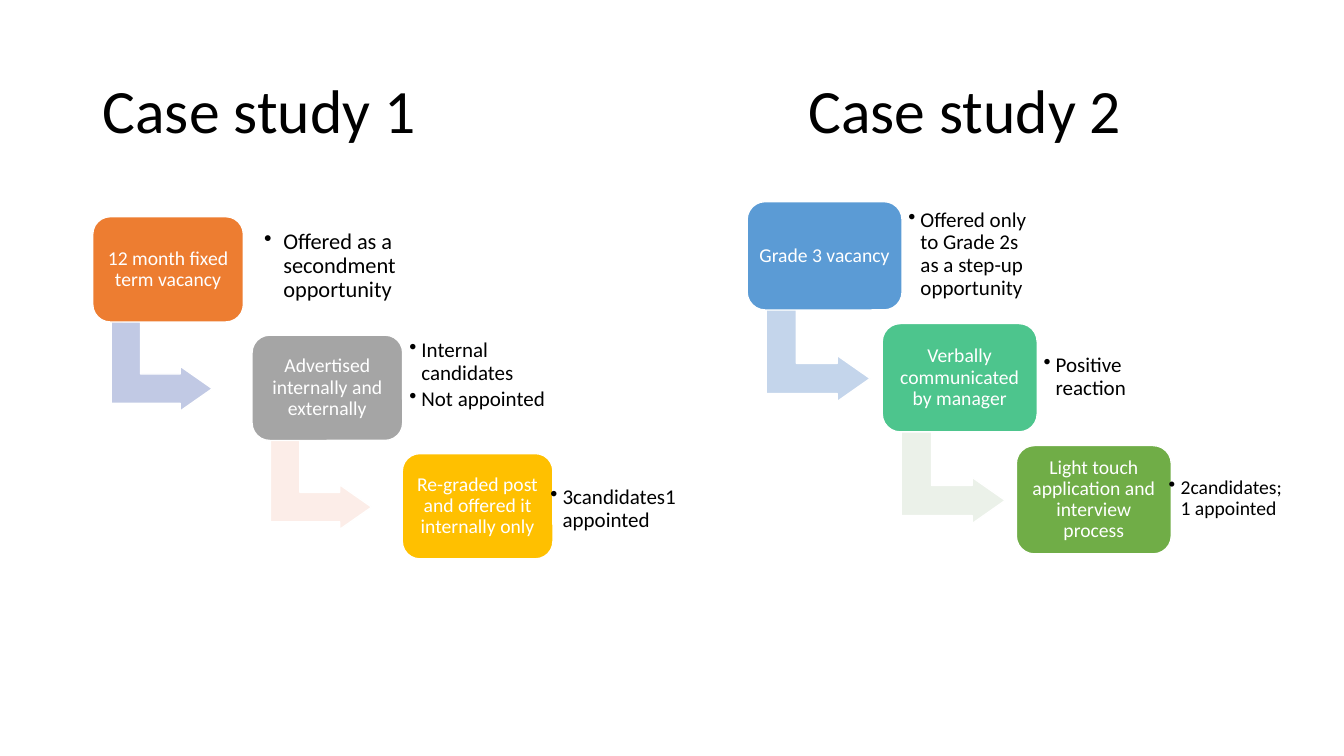
from lxml.etree import SubElement
from pptx import Presentation
from pptx.dml.color import RGBColor
from pptx.enum.shapes import MSO_SHAPE as Shape
from pptx.enum.text import MSO_ANCHOR as Anchor, PP_ALIGN as Align
from pptx.oxml.ns import qn
from pptx.util import Inches, Pt

BLACK = RGBColor(0x00, 0x00, 0x00)
WHITE = RGBColor(0xFF, 0xFF, 0xFF)
ORANGE = RGBColor(0xED, 0x7D, 0x31)
GREY = RGBColor(0xA5, 0xA5, 0xA5)
GOLD = RGBColor(0xFF, 0xC0, 0x00)
BLUE = RGBColor(0x5B, 0x9B, 0xD5)
TEAL = RGBColor(0x4D, 0xC5, 0x8D)
GREEN = RGBColor(0x70, 0xAD, 0x47)
LAVENDER = RGBColor(0xC1, 0xC9, 0xE4)
BLUSH = RGBColor(0xFC, 0xED, 0xE8)
PALE_BLUE = RGBColor(0xC4, 0xD5, 0xEB)
PALE_GREEN = RGBColor(0xEB, 0xF1, 0xE9)

CASES = [
    {"lefts": (9.2, 25, 39.9), "top": 21.5, "step": 11.75, "height": 10.45,
     "arrows": (LAVENDER, BLUSH),
     "cards": [(ORANGE, "12 month fixed term vacancy"),
               (GREY, "Advertised internally and externally"),
               (GOLD, "Re-graded post and offered it internally only")],
     "notes": [(25.6, 22.2, 24.9, 16, 1.9, ["Offered as a secondment opportunity"]),
               (40, 33, 16.7, 15, 1.2, ["Internal candidates", "Not appointed"]),
               (54, 46.3, 14.5, 15, 1.2, ["3candidates1 appointed"])]},
    {"lefts": (74.1, 87.5, 100.8), "top": 20, "step": 12.1, "height": 10.75,
     "arrows": (PALE_BLUE, PALE_GREEN),
     "cards": [(BLUE, "Grade 3 vacancy"),
               (TEAL, "Verbally communicated by manager"),
               (GREEN, "Light touch application and interview process")],
     "notes": [(89.5, 20.9, 13.6, 15, 1.2,
                ["Offered only to Grade 2s as a step-up opportunity"]),
               (102.9, 33.1, 11.2, 15, 1.2, ["Positive reaction"]),
               (115.3, 45.1, 13, 14, 1.2, ["2candidates; 1 appointed"])]},
]


class Deck:
    """Draws styled elements on one slide, measured in square grid cells."""

    font = "Calibri"
    cell = Inches(0.1)

    def __init__(self):
        self.prs = Presentation()
        self.prs.slide_width, self.prs.slide_height = Inches(13.33), Inches(7.5)
        self.s = self.prs.slides.add_slide(self.prs.slide_layouts[6])

    def grid(self, *cells):
        return [round(n * self.cell) for n in cells]

    def apply(self, target, formats):
        for name, value in formats.items():
            setattr(target, name, value)

    def fill_text(self, sp, lines, size, color, inset=None, align=Align.LEFT):
        tf = sp.text_frame
        self.apply(tf, {"word_wrap": True, "vertical_anchor": Anchor.MIDDLE})
        if inset is not None:
            sides = ("left", "top", "right", "bottom")
            self.apply(tf, {f"margin_{side}": Inches(inset) for side in sides})
        for i, line in enumerate(lines):
            p = tf.add_paragraph() if i else tf.paragraphs[0]
            self.apply(p, {"alignment": align, "line_spacing": 0.9,
                           "space_after": Pt(2)})
            r = p.add_run()
            r.text = line
            self.apply(r.font, {"name": self.font, "size": Pt(size)})
            r.font.color.rgb = color
        return tf.paragraphs

    def title(self, x, y, w, h, text, tab):
        sp = self.s.shapes.add_textbox(*self.grid(x, y, w, h))
        p = self.fill_text(sp, [text], 44, BLACK)[0]
        tabs = SubElement(p._p.get_or_add_pPr(), qn("a:tabLst"))
        SubElement(tabs, qn("a:tab"), pos=str(self.grid(tab)[0]), algn="l")

    def block(self, kind, x, y, w, h, color, adjustments):
        sp = self.s.shapes.add_shape(kind, *self.grid(x, y, w, h))
        sp.shadow.inherit = False
        sp.fill.solid()
        sp.fill.fore_color.rgb = color
        sp.line.color.rgb = WHITE
        sp.line.width = Pt(1)
        for i, value in enumerate(adjustments):
            sp.adjustments[i] = value
        return sp

    def card(self, x, y, h, color, text):
        sp = self.block(Shape.ROUNDED_RECTANGLE, x, y, 1.43 * h, h, color, [0.167])
        self.fill_text(sp, [text], 14, WHITE, 0.06, Align.CENTER)

    def arrow(self, x, y, h, color):
        sp = self.block(Shape.BENT_UP_ARROW, x + 0.23 * h, y + 0.94 * h,
                        0.85 * h, 0.96 * h, color, [0.328, 0.25, 0.358])
        sp.rotation = 90

    def note(self, x, y, w, h, size, indent, lines):
        sp = self.s.shapes.add_textbox(*self.grid(x, y, w, h))
        hang = self.grid(indent)[0]
        for p in self.fill_text(sp, lines, size, BLACK, 0.06):
            pPr = p._p.get_or_add_pPr()
            pPr.set("marL", str(hang))
            pPr.set("indent", str(-hang))
            SubElement(pPr, qn("a:buChar"), char="•")

    def cascade(self, lefts, top, step, height, arrows, cards, notes):
        tops = [top + i * step for i in range(len(cards))]
        for x, y, color in zip(lefts, tops, arrows):
            self.arrow(x, y, height, color)
        for x, y, (color, text) in zip(lefts, tops, cards):
            self.card(x, y, height, color, text)
        for x, y, w, size, indent, lines in notes:
            self.note(x, y, w, 0.81 * height, size, indent, lines)


def main():
    deck = Deck()
    deck.title(9.2, 4, 115, 14.5, "Case study 1\tCase study 2", 70)
    for case in CASES:
        deck.cascade(**case)
    deck.prs.save("out.pptx")


if __name__ == "__main__":
    main()
